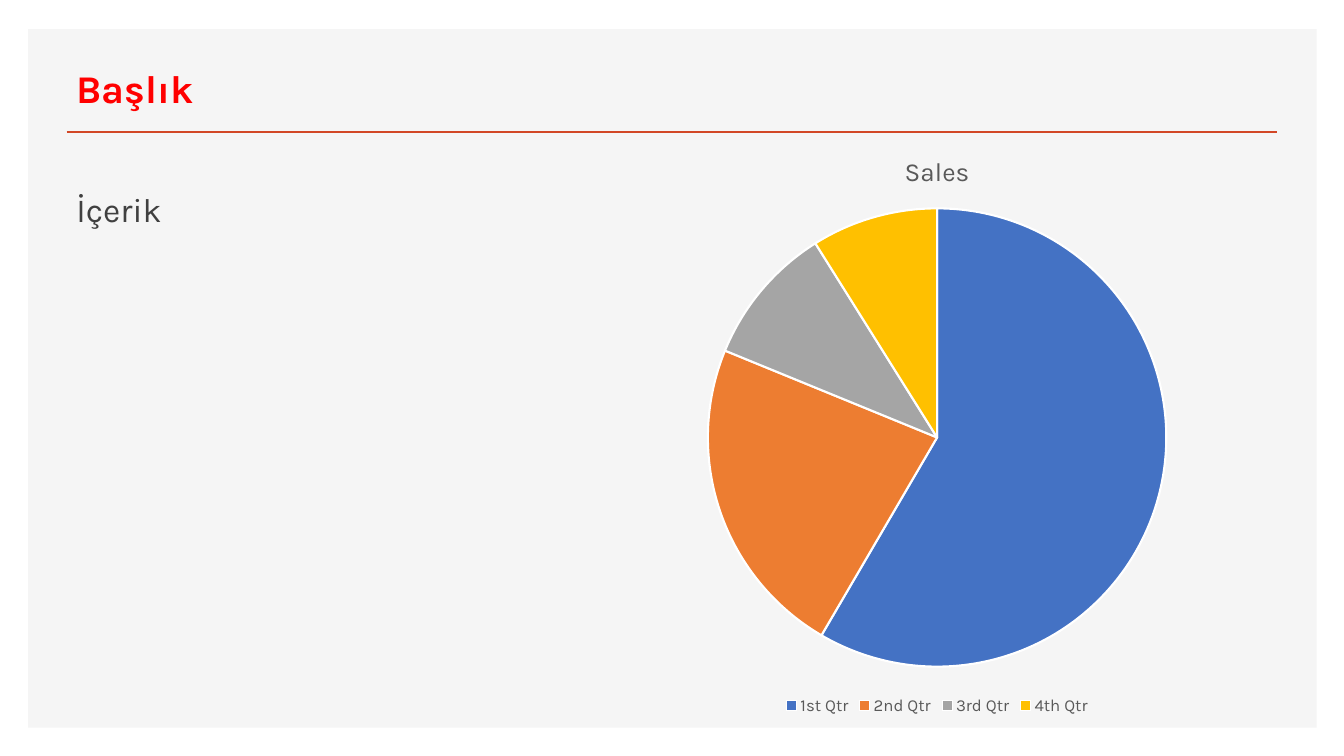
from lxml import etree
from pptx import Presentation
from pptx.chart.data import CategoryChartData
from pptx.dml.color import RGBColor
from pptx.enum.chart import XL_CHART_TYPE, XL_LEGEND_POSITION
from pptx.enum.shapes import MSO_CONNECTOR, MSO_SHAPE
from pptx.enum.text import MSO_ANCHOR, PP_ALIGN
from pptx.oxml import parse_xml
from pptx.oxml.ns import nsdecls, qn
from pptx.util import Inches, Pt

PIE = XL_CHART_TYPE.PIE
BOTTOM = XL_LEGEND_POSITION.BOTTOM
STRAIGHT = MSO_CONNECTOR.STRAIGHT
RECTANGLE = MSO_SHAPE.RECTANGLE
MIDDLE, TOP = MSO_ANCHOR.MIDDLE, MSO_ANCHOR.TOP
LEFT = PP_ALIGN.LEFT

FONT = "Karla"
COLORS = {
    "panel": "F5F5F5", "rule": "D24726", "title": "FF0000", "body": "404040",
    "chart text": "595959", "slice edge": "FFFFFF",
}
SALES = {
    "1st Qtr": (59, "4472C4"),
    "2nd Qtr": (23, "ED7D31"),
    "3rd Qtr": (10, "A5A5A5"),
    "4th Qtr": (9, "FFC000"),
}

# Boxes in inches: left, top, width, height
SLIDE_WIDTH, SLIDE_HEIGHT = 13.33, 7.5
MARGIN, RULE_TOP = 0.66, 1.31
PANEL = (0.28, 0.29, 12.78, 6.93)
HEADER = (MARGIN, 0.49, SLIDE_WIDTH - 2 * MARGIN, RULE_TOP - 0.49)
CONTENT = (MARGIN, 1.62, 12.28, 5.39)
CHART = (5.6, RULE_TOP, 7.39, 5.83)
PIE_SHARES = {"x": 0.19, "y": 0.13, "w": 0.62, "h": 0.78}


def color(name):
    return RGBColor.from_string(COLORS[name])


def inches(box):
    return [Inches(length) for length in box]


def style_font(font, size, color_name, bold=False):
    font.name = FONT
    font.size = Pt(size)
    font.bold = bold
    font.color.rgb = color(color_name)


def write_text(frame, text, size, color_name, spacing, anchor, bold=False):
    frame.word_wrap = True
    frame.vertical_anchor = anchor
    para = frame.paragraphs[0]
    para.alignment = LEFT
    para.line_spacing = spacing
    span = para.add_run()
    span.text = text
    style_font(span.font, size, color_name, bold)


def add_panel(page, box):
    panel = page.shapes.add_shape(RECTANGLE, *inches(box))
    panel.shadow.inherit = False
    panel.fill.solid()
    panel.fill.fore_color.rgb = color("panel")
    panel.line.fill.background()


def add_header(page, box):
    left, top, width, height = box
    # Rule under the title
    rule = page.shapes.add_connector(
        STRAIGHT, *inches((left, top + height, left + width, top + height)))
    rule.line.color.rgb = color("rule")
    rule.line.width = Pt(2)
    etree.SubElement(rule._element.spPr, qn("a:effectLst"))
    # Title, raised above the panel
    title = page.shapes.title
    title.left, title.top, title.width, title.height = inches(box)
    write_text(title.text_frame, "Başlık", 28, "title", 0.9, MIDDLE, bold=True)
    page.shapes._spTree.append(title._element)


def add_content(page, box):
    content = page.shapes.add_textbox(*inches(box))
    write_text(content.text_frame, "İçerik", 24, "body", 1.5, TOP)


def place_pie(chart):
    shares = "".join(f'<c:{key} val="{share}"/>' for key, share in PIE_SHARES.items())
    layout = parse_xml(
        f'<c:layout {nsdecls("c")}><c:manualLayout><c:layoutTarget val="inner"/>'
        f'<c:xMode val="edge"/><c:yMode val="edge"/>{shares}'
        '</c:manualLayout></c:layout>')
    plot_area = chart._chartSpace.chart.plotArea
    for old_layout in plot_area.findall(qn("c:layout")):
        plot_area.remove(old_layout)
    plot_area.insert(0, layout)


def add_sales_chart(page, box):
    data = CategoryChartData()
    data.categories = list(SALES)
    data.add_series("Sales", [value for value, _ in SALES.values()])
    chart = page.shapes.add_chart(PIE, *inches(box), data).chart
    style_font(chart.font, 12, "chart text")

    # Title and legend
    chart.has_title = True
    span = chart.chart_title.text_frame.paragraphs[0].add_run()
    span.text = "Sales"
    style_font(span.font, 18.6, "chart text")
    chart.chart_title.include_in_layout = False
    chart.has_legend = True
    chart.legend.position = BOTTOM
    chart.legend.include_in_layout = False
    style_font(chart.legend.font, 12, "chart text")

    # Slices
    plot = chart.plots[0]
    plot.vary_by_categories = True
    for index, (_, fill) in enumerate(SALES.values()):
        slice_format = plot.series[0].points[index].format
        slice_format.fill.solid()
        slice_format.fill.fore_color.rgb = RGBColor.from_string(fill)
        slice_format.line.color.rgb = color("slice edge")
        slice_format.line.width = Pt(1.5)
    place_pie(chart)


def main():
    deck = Presentation()
    deck.slide_width, deck.slide_height = inches((SLIDE_WIDTH, SLIDE_HEIGHT))
    page = deck.slides.add_slide(deck.slide_layouts[5])
    add_panel(page, PANEL)
    add_header(page, HEADER)
    add_content(page, CONTENT)
    add_sales_chart(page, CHART)
    deck.save("out.pptx")


if __name__ == "__main__":
    main()
